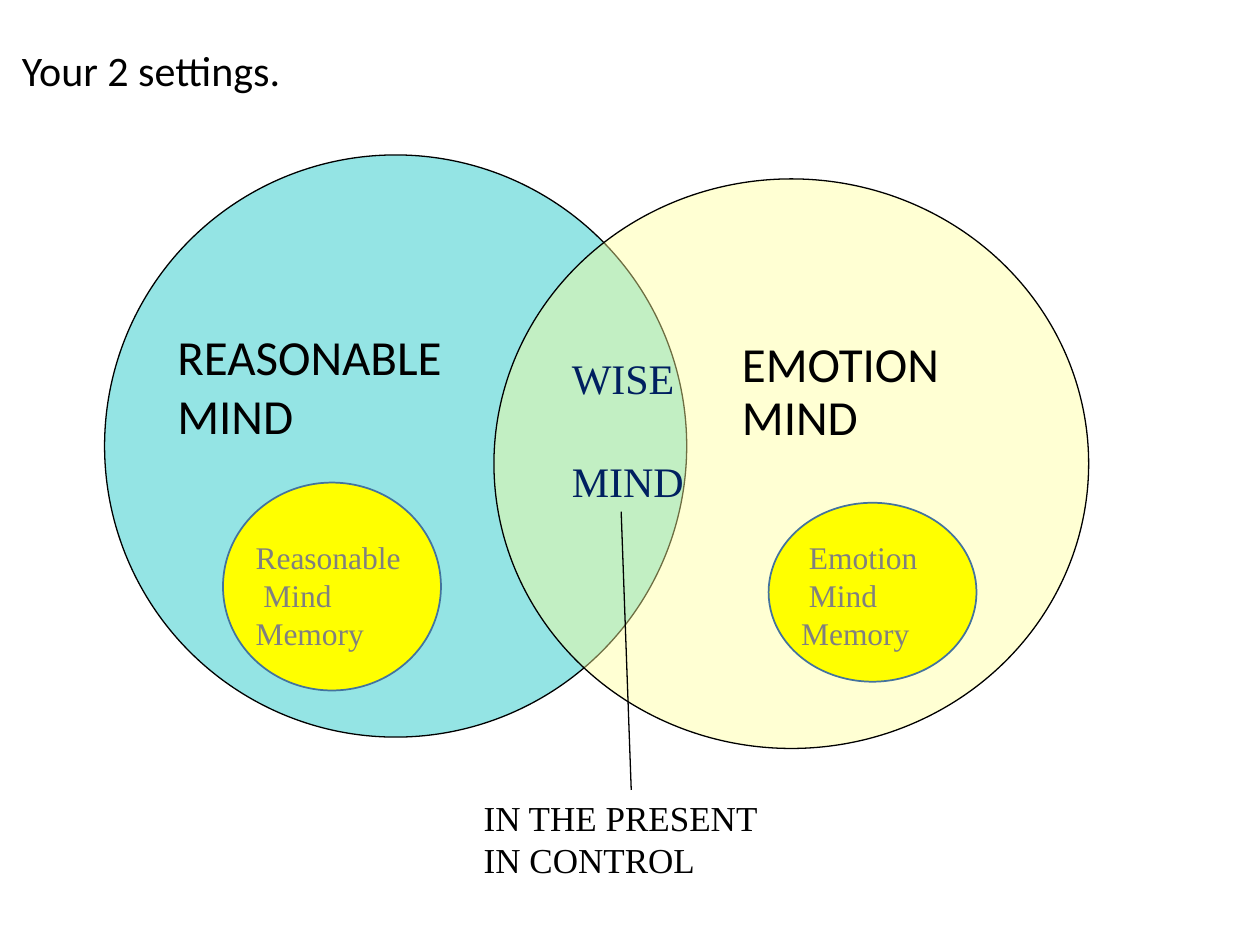
from lxml.etree import SubElement
from pptx import Presentation
from pptx.dml.color import RGBColor
from pptx.enum.shapes import MSO_CONNECTOR, MSO_SHAPE
from pptx.enum.text import MSO_ANCHOR
from pptx.oxml.ns import qn
from pptx.util import Inches, Pt

BLACK = RGBColor(0x00, 0x00, 0x00)
TEAL = RGBColor(0x33, 0xCC, 0xCC)
CREAM = RGBColor(0xFF, 0xFF, 0x99)
YELLOW = RGBColor(0xFF, 0xFF, 0x00)
BLUE = RGBColor(0x43, 0x73, 0x9E)
NAVY = RGBColor(0x00, 0x20, 0x60)
GRAY = RGBColor(0x80, 0x80, 0x80)
SANS, SERIF = "Calibri", "Times New Roman"

# The slide is a grid of 100 columns by 75 rows of square cells.
CELL = Inches(0.1)
presentation = Presentation()
presentation.slide_width = 100 * CELL
presentation.slide_height = 75 * CELL
slide = presentation.slides.add_slide(presentation.slide_layouts[6])


def add_ellipse(area, fill, line, line_width, opacity=None):
    """Draw an ellipse over area (column, row, columns, rows); opacity in percent."""
    shape = slide.shapes.add_shape(MSO_SHAPE.OVAL, *[int(n * CELL) for n in area])
    shape.shadow.inherit = False
    shape.fill.solid()
    shape.fill.fore_color.rgb = fill
    shape.line.color.rgb = line
    shape.line.width = Pt(line_width)
    if opacity:
        color = shape._element.spPr.find(qn("a:solidFill"))[0]
        SubElement(color, qn("a:alpha"), val=str(opacity * 1000))


def add_text(area, lines, font, size, color, spacing=1.0, gap=0):
    """Write one paragraph per line over area, gap points apart."""
    box = slide.shapes.add_textbox(*[int(n * CELL) for n in area])
    frame = box.text_frame
    frame.word_wrap = True
    frame.text = "\n".join(lines)
    for paragraph in frame.paragraphs:
        paragraph.font.name = font
        paragraph.font.size = Pt(size)
        paragraph.font.color.rgb = color
        paragraph.line_spacing = spacing
    for paragraph in frame.paragraphs[1:]:
        paragraph.space_before = Pt(gap)
    return box


title = add_text((0, 0, 85, 11.5), [" Your 2 settings."], SANS, 24, BLACK, 0.9)
title.text_frame.vertical_anchor = MSO_ANCHOR.MIDDLE

# Overlapping minds
add_ellipse((8.3, 12.3, 46.2, 46.2), TEAL, BLACK, 0.75, 52)
add_text((13.1, 25.4, 31.7, 19.9), ["REASONABLE", "MIND"], SANS, 28, BLACK)
add_ellipse((39.2, 14.2, 47.2, 45.2), CREAM, BLACK, 0.75, 43)
add_text((57.9, 26.5, 22.8, 9.5), ["EMOTION", "MIND"], SANS, 28, BLACK, 0.9)

# Wise mind and what it means
add_text((37.4, 62.7, 41.9, 7.7), ["IN THE PRESENT", "IN CONTROL"], SERIF, 20, BLACK)
pointer = slide.shapes.add_connector(
    MSO_CONNECTOR.STRAIGHT, *[int(n * CELL) for n in (49.3, 40.6, 50.1, 62.7)]
)
pointer.line.color.rgb = BLACK
pointer.line.width = Pt(0.75)
SubElement(pointer._element.spPr, qn("a:effectLst"))
add_text((44.4, 27.5, 11, 13.1), ["WISE", "MIND"], SERIF, 24, NAVY, gap=30)

# Memories
memories = [
    ("Reasonable", (17.7, 38.3, 17.3, 16.5), (19.3, 42.2, 16.5, 10.1)),
    (" Emotion", (61, 39.9, 16.5, 14.2), (62.6, 42.2, 12.4, 10.1)),
]
for name, ellipse_area, text_area in memories:
    add_ellipse(ellipse_area, YELLOW, BLUE, 1)
    add_text(text_area, [name, " Mind Memory"], SERIF, 18, GRAY)

presentation.save("out.pptx")
